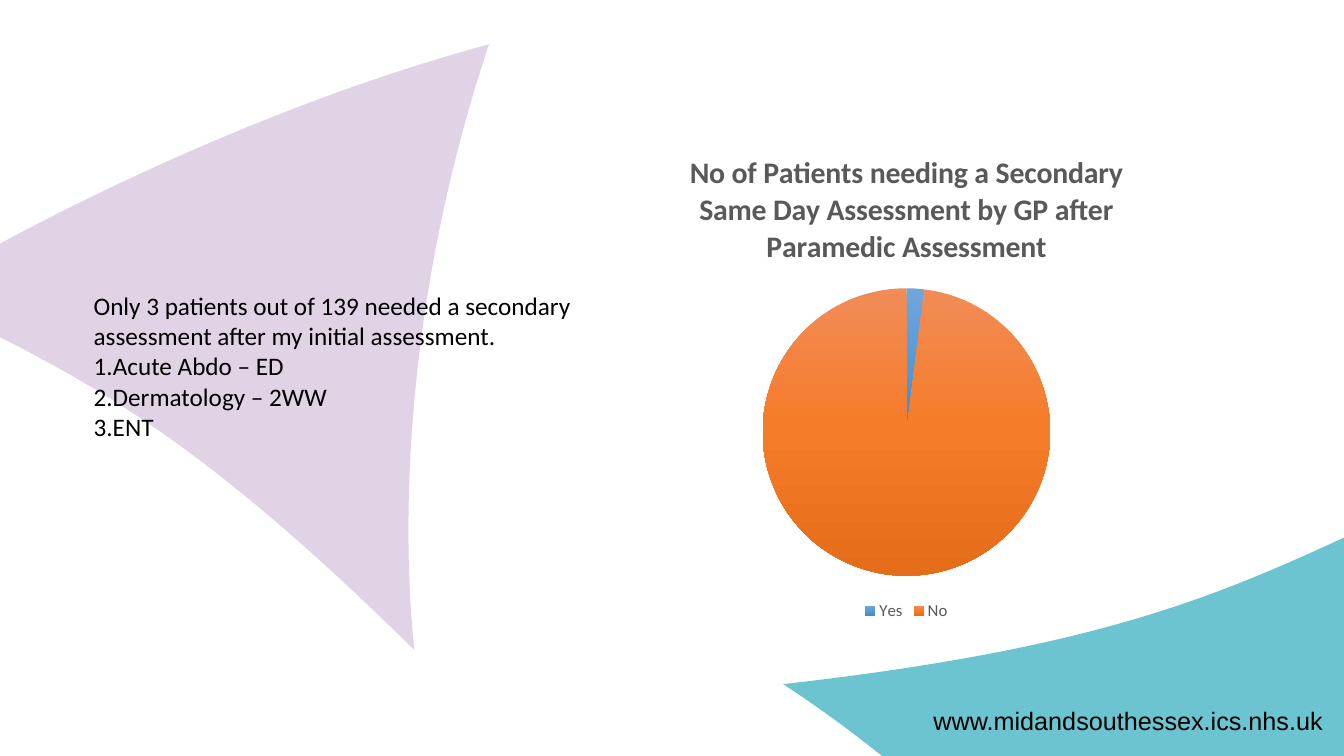
from math import cos, radians, sin

from lxml import etree
from pptx import Presentation
from pptx.chart.data import CategoryChartData
from pptx.dml.color import RGBColor
from pptx.enum.chart import XL_CHART_TYPE, XL_LEGEND_POSITION
from pptx.enum.text import MSO_AUTO_SIZE
from pptx.oxml import parse_xml
from pptx.oxml.ns import nsdecls, qn
from pptx.util import Inches, Pt

PIE = XL_CHART_TYPE.PIE
BOTTOM = XL_LEGEND_POSITION.BOTTOM
FIT_SHAPE = MSO_AUTO_SIZE.SHAPE_TO_FIT_TEXT

COLORS = {"teal": "6BC4CF", "purple": "6A2383", "black": "000000", "grey": "595959"}
GRADIENTS = {
    "Yes": ("71A6DB", "559BDB", "448ACA"),
    "No": ("F18C57", "F67B28", "E56C19"),
}


def format_font(font, size, color="black", name="Calibri", bold=False):
    font.size = Pt(size)
    font.name = name
    font.bold = bold
    font.color.rgb = RGBColor.from_string(COLORS[color])


def add_text(p, text, **fmt):
    r = p.add_run()
    r.text = text
    format_font(r.font, **fmt)


def turn_back(point, center, angle):
    """Place of a point before its shape is rotated, in EMU."""
    dx, dy = point[0] - center[0], point[1] - center[1]
    c, s = cos(radians(angle)), sin(radians(angle))
    return (Inches(center[0] + dx * c + dy * s),
            Inches(center[1] - dx * s + dy * c))


class SlideBuilder:
    def __init__(self, prs):
        self.s = prs.slides.add_slide(prs.slide_layouts[6])

    def swoosh(self, curves, center, angle, color, alpha=None):
        """Closed outline of cubic curves, each two handles and an end."""
        curves = [[turn_back(pt, center, angle) for pt in c] for c in curves]
        ends = [c[-1] for c in curves]
        builder = self.s.shapes.build_freeform(*ends[-1])
        builder.add_line_segments(ends, close=True)
        sp = builder.convert_to_shape()

        # Bend the straight sides into curves
        for side, curve in zip(list(sp._element.iter(qn("a:lnTo"))), curves):
            bend = etree.Element(qn("a:cubicBezTo"))
            for x, y in curve:
                etree.SubElement(bend, qn("a:pt"),
                                 x=str(x - sp.left), y=str(y - sp.top))
            side.getparent().replace(side, bend)

        sp.rotation = angle
        sp.shadow.inherit = False
        sp.line.fill.background()
        sp.fill.solid()
        sp.fill.fore_color.rgb = RGBColor.from_string(COLORS[color])
        if alpha is not None:
            rgb = sp.fill._xPr.find(".//" + qn("a:srgbClr"))
            etree.SubElement(rgb, qn("a:alpha"), val=str(alpha * 1000))

    def text(self, box, lines, **fmt):
        sp = self.s.shapes.add_textbox(*map(Inches, box))
        tf = sp.text_frame
        tf.word_wrap = False
        tf.auto_size = FIT_SHAPE
        for i, line in enumerate(lines):
            p = tf.add_paragraph() if i else tf.paragraphs[0]
            add_text(p, line, **fmt)

    def pie(self, box, title, values):
        data = CategoryChartData()
        data.categories = list(values)
        data.add_series(title, list(values.values()))
        chart = self.s.shapes.add_chart(PIE, *map(Inches, box), data).chart
        format_font(chart.font, 10)

        chart.has_title = True
        add_text(chart.chart_title.text_frame.paragraphs[0], title,
                 size=21.3, color="grey", bold=True)
        chart.chart_title.include_in_layout = False

        chart.has_legend = True
        chart.legend.position = BOTTOM
        chart.legend.include_in_layout = False
        format_font(chart.legend.font, 12, "grey")

        plot = chart.plots[0]
        plot.vary_by_categories = True
        for i, name in enumerate(values):
            self.gradient(plot.series[0].points[i].format, GRADIENTS[name])

    def gradient(self, fmt, colors):
        """Even vertical gradient of three colours, from top to bottom."""
        fmt.fill.gradient()
        old = fmt.fill._xPr.find(qn("a:gradFill"))
        stops = "".join(
            f'<a:gs pos="{i * 50000}"><a:srgbClr val="{c}"/></a:gs>'
            for i, c in enumerate(colors))
        new = parse_xml(
            f'<a:gradFill {nsdecls("a")} rotWithShape="1"><a:gsLst>{stops}</a:gsLst>'
            '<a:lin ang="5400000" scaled="0"/></a:gradFill>')
        old.getparent().replace(old, new)


def main():
    prs = Presentation()
    prs.slide_width, prs.slide_height = Inches(13.33), Inches(7.5)
    slide = SlideBuilder(prs)

    # Background swooshes
    slide.swoosh([
        ((13.78, 6.59), (13.21, 9.14), (12.24, 11.37)),
        ((10.61, 8.84), (8.69, 7.37), (7.78, 6.78)),
        ((11.32, 6.38), (12.35, 5.77), (13.99, 5.03)),
    ], (11.21, 7.07), 120.9, "teal")
    slide.swoosh([
        ((0.41, 2.14), (2.63, 1.04), (4.85, 0.44)),
        ((3.95, 3.14), (4, 5.43), (4.11, 6.45)),
        ((1.71, 4.08), (0.65, 3.68), (-0.87, 2.91)),
    ], (2.28, 3.75), 352.1, "purple", alpha=20)

    # Web address
    slide.text((9.16, 6.95, 4.1, 0.4), ["www.midandsouthessex.ics.nhs.uk"],
               size=18, name="Arial")

    # Chart
    slide.pie((5.94, 1.3, 6.1, 4.9),
              "No of Patients needing a Secondary Same Day Assessment by GP "
              "after Paramedic Assessment",
              {"Yes": 2, "No": 98})

    # Findings
    slide.text((0.83, 2.83, 5.05, 1.62), [
        "Only 3 patients out of 139 needed a secondary",
        "assessment after my initial assessment.",
        "1.Acute Abdo – ED",
        "2.Dermatology – 2WW",
        "3.ENT",
    ], size=18)

    prs.save("out.pptx")


if __name__ == "__main__":
    main()
